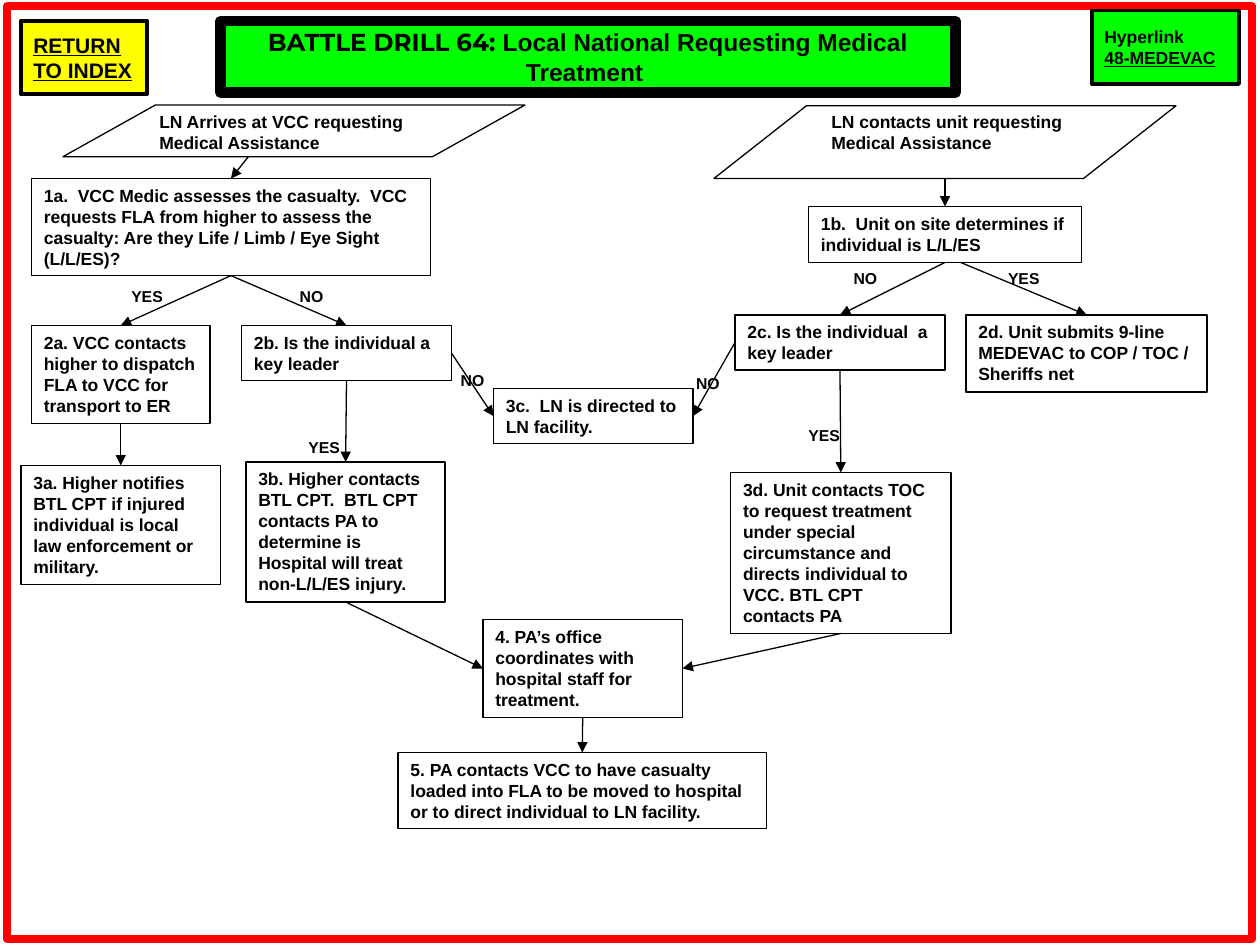
from dataclasses import dataclass
from typing import Optional

from lxml import etree
from pptx import Presentation
from pptx.dml.color import RGBColor
from pptx.enum.shapes import MSO_CONNECTOR, MSO_SHAPE
from pptx.enum.text import MSO_ANCHOR, MSO_AUTO_SIZE, PP_ALIGN
from pptx.oxml.ns import qn
from pptx.util import Pt

RECTANGLE = MSO_SHAPE.RECTANGLE
PARALLELOGRAM = MSO_SHAPE.FLOWCHART_DATA
STRAIGHT = MSO_CONNECTOR.STRAIGHT
ANCHOR_TOP, ANCHOR_MIDDLE = MSO_ANCHOR.TOP, MSO_ANCHOR.MIDDLE
ALIGN_LEFT, ALIGN_CENTER = PP_ALIGN.LEFT, PP_ALIGN.CENTER
NO_AUTOFIT = MSO_AUTO_SIZE.NONE
TOP, LEFT, BOTTOM, RIGHT = range(4)

BLACK, RED, GREEN, YELLOW = "000000", "FF0000", "00FF00", "FFFF00"
BODY_FONT, HEADING_FONT = "Arial", "Montserrat"


@dataclass
class Area:
    left: float
    top: float
    width: float
    height: float

    def lengths(self) -> list:
        return [Pt(value) for value in (self.left, self.top, self.width, self.height)]


@dataclass
class Step:
    key: str
    area: Area
    text: str


@dataclass
class Entry:
    outline: Area
    caption: Area
    text: str


@dataclass
class Label:
    text: str
    area: Area


@dataclass
class Arrow:
    target: str
    target_side: int
    source: str = ""
    source_side: int = BOTTOM
    start: tuple = (0, 0)


@dataclass
class Button:
    area: Area
    fill: str
    size: float
    lines: list
    underlined: list


ENTRIES = [
    Entry(Area(36, 60, 264, 29.5), Area(84, 60, 172, 31),
          "LN Arrives at VCC requesting Medical Assistance"),
    Entry(Area(408, 60.5, 264, 41.5), Area(468, 60, 172, 31.5),
          "LN contacts unit requesting Medical Assistance"),
]

STEPS = [
    Step("1a", Area(18, 102, 228, 55.5),
         "VCC Medic assesses the casualty.  VCC requests FLA from higher to assess "
         "the casualty: Are they Life / Limb / Eye Sight (L/L/ES)?"),
    Step("1b", Area(462, 118, 156, 32),
         "Unit on site determines if individual is L/L/ES"),
    Step("2a", Area(18, 186, 102, 56),
         "VCC contacts higher to dispatch FLA to VCC for transport to ER"),
    Step("2b", Area(138, 186, 120, 31.5), "Is the individual a key leader"),
    Step("2c", Area(420, 180, 120, 31.5), "Is the individual  a key leader"),
    Step("2d", Area(552, 180, 138, 44),
         "Unit submits 9-line MEDEVAC to COP / TOC / Sheriffs net"),
    Step("3a", Area(12, 266, 114, 68),
         "Higher notifies BTL CPT if injured individual is local law enforcement "
         "or military."),
    Step("3b", Area(140.5, 264, 114, 80),
         "Higher contacts BTL CPT.  BTL CPT contacts PA to determine is Hospital "
         "will treat non-L/L/ES injury."),
    Step("3c", Area(282, 222, 114, 31.5), "LN is directed to LN facility."),
    Step("3d", Area(417.5, 270, 126, 92),
         "Unit contacts TOC to request treatment under special circumstance and "
         "directs individual to VCC. BTL CPT contacts PA"),
    Step("4", Area(276, 354, 114, 56),
         "PA’s office coordinates with hospital staff for treatment."),
    Step("5", Area(227.5, 430, 210.5, 43.5),
         "PA contacts VCC to have casualty loaded into FLA to be moved to hospital "
         "or to direct individual to LN facility."),
]
WIDE_NUMBERS = ("1a", "1b", "3c")

ARROWS = [
    Arrow("1a", TOP, start=(142, 89.5)),
    Arrow("1b", TOP, start=(540, 102)),
    Arrow("2a", TOP, "1a"),
    Arrow("2b", TOP, "1a"),
    Arrow("2c", TOP, "1b"),
    Arrow("2d", TOP, start=(549, 150)),
    Arrow("3a", TOP, "2a"),
    Arrow("3b", TOP, "2b"),
    Arrow("3c", LEFT, "2b", RIGHT),
    Arrow("3c", RIGHT, "2c", LEFT),
    Arrow("3d", TOP, "2c"),
    Arrow("4", LEFT, "3b"),
    Arrow("4", RIGHT, "3d"),
    Arrow("5", TOP, "4"),
]

LABELS = [
    Label("YES", Area(63, 160.5, 42, 18)),
    Label("NO", Area(163.5, 160.5, 29, 18)),
    Label("NO", Area(255.5, 208.5, 29, 18)),
    Label("YES", Area(168, 246.5, 34.5, 18)),
    Label("YES", Area(564, 150, 42, 18)),
    Label("NO", Area(480, 150, 29, 18)),
    Label("NO", Area(390, 210, 29, 18)),
    Label("YES", Area(450, 240, 42, 18)),
]

BUTTONS = [
    Button(Area(12, 12, 72, 42), YELLOW, 12, ["RETURN", "TO INDEX"], [True, True]),
    Button(Area(624, 6, 84, 42), GREEN, 10, ["Hyperlink", "48-MEDEVAC"], [False, True]),
]


def color(value: str) -> RGBColor:
    return RGBColor.from_string(value)


def style_shape(shape, fill: Optional[str], line: str, width: float) -> None:
    if fill:
        shape.fill.solid()
        shape.fill.fore_color.rgb = color(fill)
    else:
        shape.fill.background()
    shape.line.color.rgb = color(line)
    shape.line.width = Pt(width)


def style_font(font, size: float, name: str = BODY_FONT) -> None:
    font.name, font.size, font.bold = name, Pt(size), True
    font.color.rgb = color(BLACK)


def add_outline(slide, kind, area: Area, fill: Optional[str], line: str, width: float):
    shape = slide.shapes.add_shape(kind, *area.lengths())
    shape.shadow.inherit = False
    style_shape(shape, fill, line, width)
    return shape


def write_text(shape, lines: list, size: float, align=ALIGN_LEFT, anchor=ANCHOR_TOP) -> None:
    frame = shape.text_frame
    frame.word_wrap = True
    frame.vertical_anchor = anchor
    frame.text = "\n".join(lines)
    for paragraph in frame.paragraphs:
        paragraph.alignment = align
        style_font(paragraph.font, size)


def add_caption(slide, area: Area, text: str, size: float, align=ALIGN_LEFT) -> None:
    write_text(slide.shapes.add_textbox(*area.lengths()), [text], size, align)


def add_step(slide, step: Step):
    shape = add_outline(slide, RECTANGLE, step.area, None, BLACK, 1)
    gap = "  " if step.key in WIDE_NUMBERS else " "
    write_text(shape, [f"{step.key}.{gap}{step.text}"], 10)
    return shape


def add_button(slide, button: Button) -> None:
    shape = add_outline(slide, RECTANGLE, button.area, button.fill, BLACK, 2.25)
    write_text(shape, button.lines, button.size, anchor=ANCHOR_MIDDLE)
    shape.text_frame.margin_right = Pt(0)
    for paragraph, underlined in zip(shape.text_frame.paragraphs, button.underlined):
        paragraph.font.underline = underlined


def add_arrow(slide, arrow: Arrow, steps: dict) -> None:
    x, y = (Pt(value) for value in arrow.start)
    connector = slide.shapes.add_connector(STRAIGHT, x, y, x, y)
    if arrow.source:
        connector.begin_connect(steps[arrow.source], arrow.source_side)
    connector.end_connect(steps[arrow.target], arrow.target_side)
    connector.line.color.rgb = color(BLACK)
    connector.line.width = Pt(0.75)
    etree.SubElement(connector.line._get_or_add_ln(), qn("a:tailEnd"), type="triangle")
    etree.SubElement(connector._element.spPr, qn("a:effectLst"))


def format_title(title) -> None:
    title.left, title.top, title.width, title.height = Area(126, 12, 420, 41).lengths()
    style_shape(title, GREEN, BLACK, 6)
    frame = title.text_frame
    frame.auto_size = NO_AUTOFIT
    frame.word_wrap = True
    frame.vertical_anchor = ANCHOR_TOP
    paragraph = frame.paragraphs[0]
    paragraph.alignment = ALIGN_CENTER
    for text, name in (("BATTLE DRILL 64:", HEADING_FONT),
                       (" Local National Requesting Medical Treatment ", BODY_FONT)):
        run = paragraph.add_run()
        run.text = text
        style_font(run.font, 14, name)


def main() -> None:
    presentation = Presentation()
    presentation.slide_width, presentation.slide_height = Pt(720), Pt(540)
    slide = presentation.slides.add_slide(presentation.slide_layouts[5])
    format_title(slide.shapes.title)
    add_outline(slide, RECTANGLE, Area(4, 3.5, 711.5, 533), None, RED, 4.5)
    for button in BUTTONS:
        add_button(slide, button)
    for entry in ENTRIES:
        add_outline(slide, PARALLELOGRAM, entry.outline, None, BLACK, 0.75)
        add_caption(slide, entry.caption, entry.text, 10)
    steps = {step.key: add_step(slide, step) for step in STEPS}
    for arrow in ARROWS:
        add_arrow(slide, arrow, steps)
    for label in LABELS:
        add_caption(slide, label.area, label.text, 9, ALIGN_CENTER)
    presentation.save("out.pptx")


if __name__ == "__main__":
    main()
